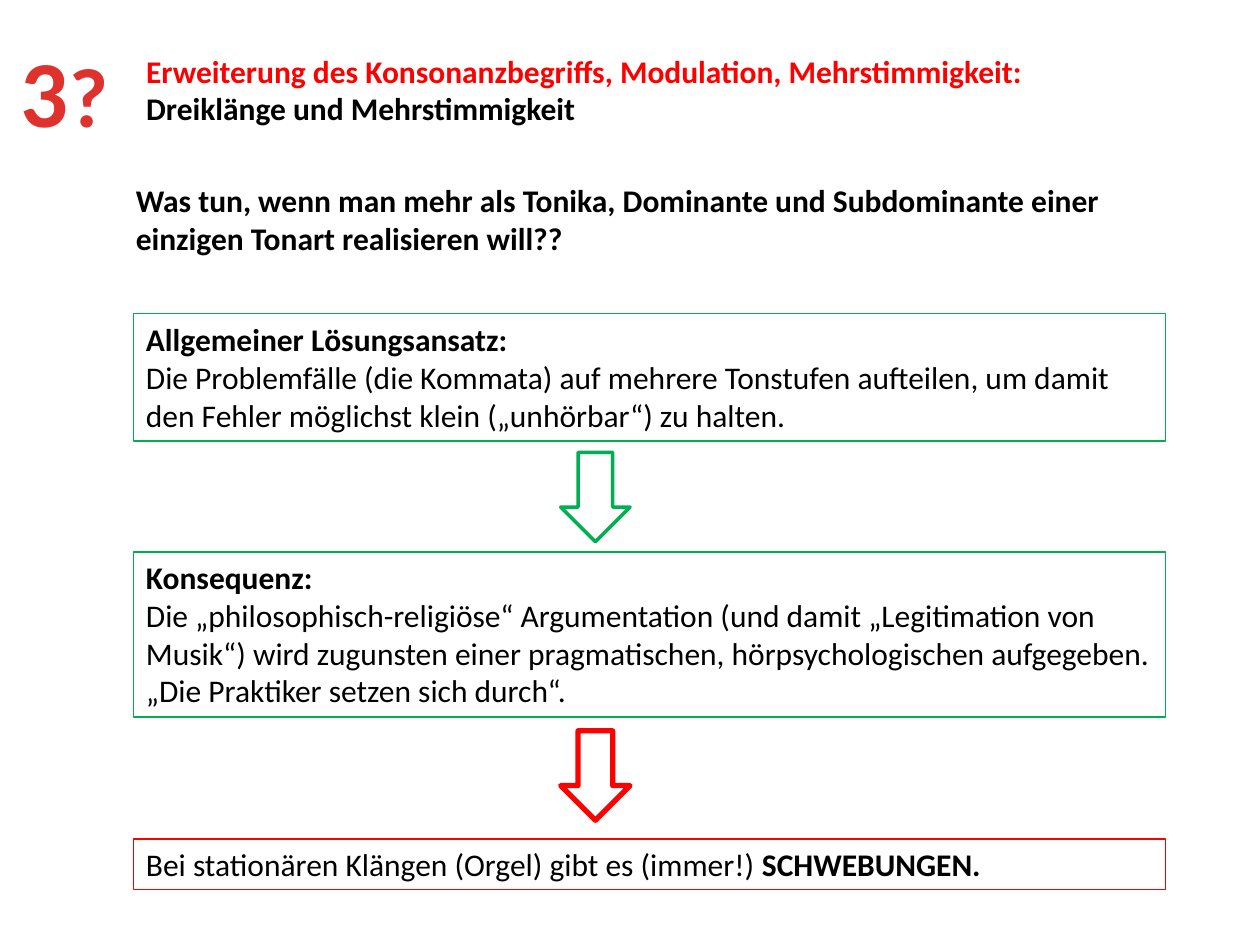
from pptx import Presentation
from pptx import util as u
from pptx.dml import color
from pptx.enum import shapes, text

COLORS = {"red": "FF0000", "green": "00B050", "black": "000000",
          "white": "FFFFFF", "crimson": "E0322D"}
COLUMNS, ROWS = 100, 75
ARROW_COLUMN, ARROW_COLUMNS, ARROW_ROWS = 33.9, 5.5, 7.1
PLAIN = {"name": "Calibri", "size": u.Pt(18), "bold": False}
BOLD = {**PLAIN, "bold": True}
FRAME = {"auto_size": text.MSO_AUTO_SIZE.NONE,
         "vertical_anchor": text.MSO_ANCHOR.TOP,
         "margin_left": u.Inches(0.1), "margin_right": u.Inches(0.1),
         "margin_top": u.Inches(0.05), "margin_bottom": u.Inches(0.05)}

HEADING = [
    [("Erweiterung des Konsonanzbegriffs, Modulation, Mehrstimmigkeit:", BOLD, "red")],
    [("Dreiklänge und Mehrstimmigkeit", BOLD, "black")],
]
QUESTION = [
    [("Was tun, wenn man mehr als Tonika, Dominante und Subdominante einer "
      "einzigen Tonart realisieren will??", BOLD, "black")],
]
NUMBER = [
    [("3", {**BOLD, "size": u.Pt(54)}, "crimson"),
     ("?", {**BOLD, "size": u.Pt(48)}, "crimson")],
]
STEPS = [
    {"rows": 10.1, "gap": 8.8, "line": "green", "paragraphs": [
        [("Allgemeiner Lösungsansatz:", BOLD, "black")],
        [("Die Problemfälle (die Kommata) auf mehrere Tonstufen aufteilen, um damit "
          "den Fehler möglichst klein („unhörbar“) zu halten.", PLAIN, "black")]]},
    {"rows": 13.1, "gap": 9.7, "line": "green", "paragraphs": [
        [("Konsequenz:", BOLD, "black")],
        [("Die „philosophisch-religiöse“ Argumentation (und damit „Legitimation von "
          "Musik“) wird zugunsten einer pragmatischen, hörpsychologischen aufgegeben. "
          "„Die Praktiker setzen sich durch“.", PLAIN, "black")]]},
    {"rows": 4, "gap": 0, "line": "red", "paragraphs": [
        [("Bei stationären Klängen (Orgel) gibt es (immer!) ", PLAIN, "black"),
         ("SCHWEBUNGEN.", BOLD, "black")]]},
]
ARROWS = [
    {"offset": 0.9, "line": "green", "weight": 2, "fill": None},
    {"offset": 1.1, "line": "red", "weight": 3, "fill": "white"},
]


def rgb(name):
    return color.RGBColor.from_string(COLORS[name])


def apply(target, values):
    for name, value in values.items():
        setattr(target, name, value)


def cells(presentation, box):
    column = presentation.slide_width / COLUMNS
    row = presentation.slide_height / ROWS
    left, top, width, height = box
    return (round(left * column), round(top * row),
            round(width * column), round(height * row))


def fill_shape(shape, name):
    if name:
        shape.fill.solid()
        shape.fill.fore_color.rgb = rgb(name)
    else:
        shape.fill.background()


def write(shape, paragraphs, align=text.PP_ALIGN.LEFT, wrap=True):
    frame = shape.text_frame
    apply(frame, {**FRAME, "word_wrap": wrap})
    for index, runs in enumerate(paragraphs):
        paragraph = frame.add_paragraph() if index else frame.paragraphs[0]
        paragraph.alignment = align
        for words, font, tone in runs:
            run = paragraph.add_run()
            run.text = words
            apply(run.font, font)
            run.font.color.rgb = rgb(tone)


def add_outlined(presentation, slide, kind, box, line, weight, fill=None):
    shape = slide.shapes.add_shape(kind, *cells(presentation, box))
    shape.shadow.inherit = False
    fill_shape(shape, fill)
    shape.line.color.rgb = rgb(line)
    shape.line.width = u.Pt(weight)
    return shape


def add_heading(presentation, slide, box):
    title = slide.shapes.title
    sides = ("left", "top", "width", "height")
    apply(title, dict(zip(sides, cells(presentation, box))))
    fill_shape(title, "white")
    write(title, HEADING, wrap=False)


def add_question(presentation, slide, box):
    question = slide.shapes.add_textbox(*cells(presentation, box))
    write(question, QUESTION)


def add_number(presentation, slide, box):
    number = slide.shapes.add_textbox(*cells(presentation, box))
    write(number, NUMBER, text.PP_ALIGN.CENTER, wrap=False)
    for run in number.text_frame.paragraphs[0].runs:
        run._r.get_or_add_rPr().set("spc", "50")


def add_steps(presentation, slide, box):
    left, top, width = box
    for step in STEPS:
        rectangle = add_outlined(presentation, slide, shapes.MSO_SHAPE.RECTANGLE,
                                 (left, top, width, step["rows"]), step["line"], 0.75)
        write(rectangle, step["paragraphs"])
        top += step["rows"] + step["gap"]


def add_arrows(presentation, slide, box):
    left, top, width = box
    for step, arrow in zip(STEPS, ARROWS):
        bottom = top + step["rows"]
        add_outlined(presentation, slide, shapes.MSO_SHAPE.DOWN_ARROW,
                     (left + ARROW_COLUMN, bottom + arrow["offset"],
                      ARROW_COLUMNS, ARROW_ROWS),
                     arrow["line"], arrow["weight"], arrow["fill"])
        top = bottom + step["gap"]


def main():
    presentation = Presentation()
    apply(presentation, {"slide_width": u.Inches(10), "slide_height": u.Inches(7.5)})
    slide = presentation.slides.add_slide(presentation.slide_layouts[5])
    chain = (10.6, 24.9, 81.9)
    add_heading(presentation, slide, (10.6, 3.6, 72.2, 7.1))
    add_question(presentation, slide, (9.8, 13.9, 85, 7.1))
    add_number(presentation, slide, (0.6, 2.1, 9.1, 10.1))
    add_steps(presentation, slide, chain)
    add_arrows(presentation, slide, chain)
    presentation.save("out.pptx")


if __name__ == "__main__":
    main()
